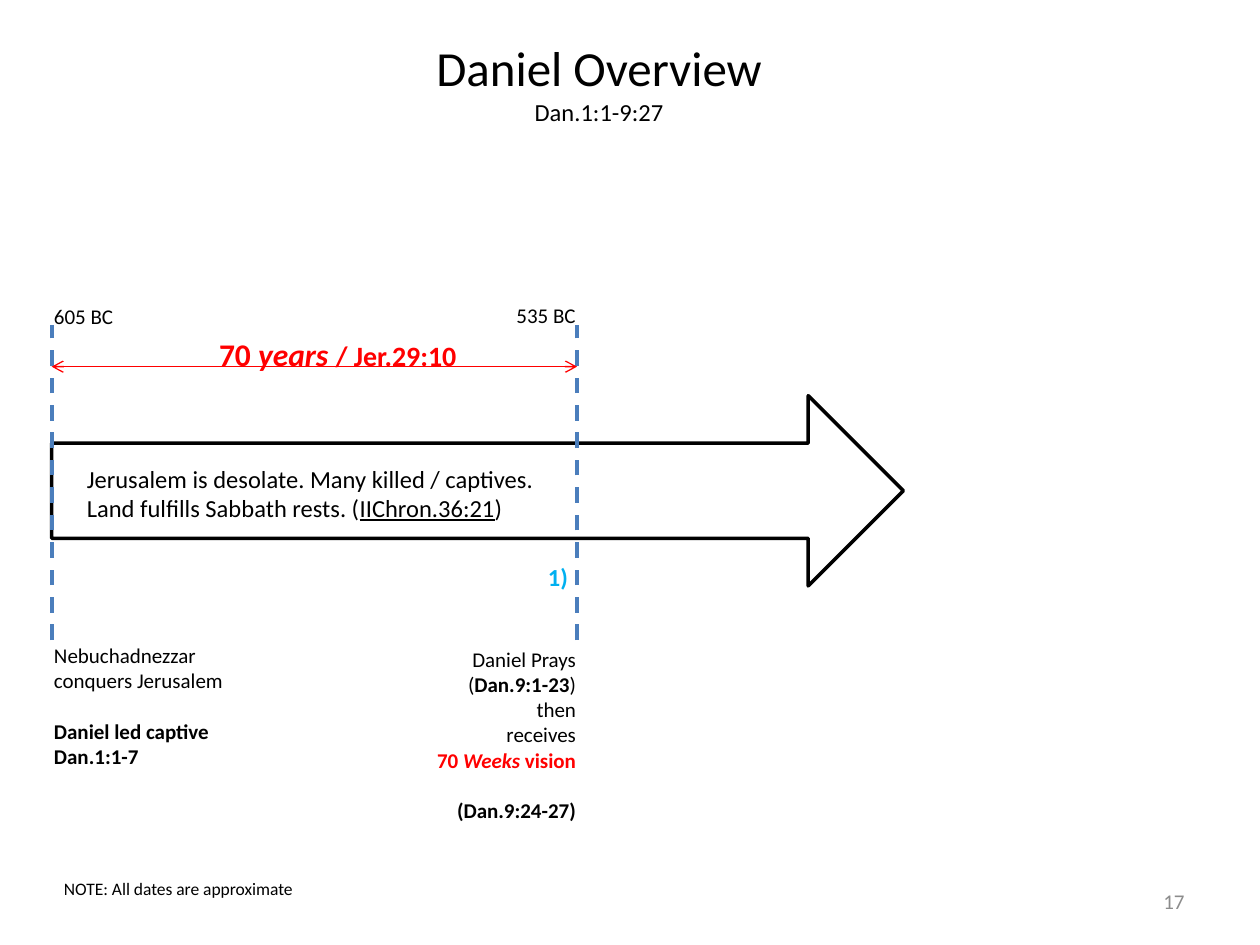
from lxml import etree
from pptx import Presentation
from pptx.dml.color import RGBColor
from pptx.enum.dml import MSO_LINE
from pptx.enum.shapes import MSO_CONNECTOR, MSO_SHAPE
from pptx.enum.text import MSO_ANCHOR, PP_ALIGN
from pptx.oxml.ns import qn
from pptx.util import Inches, Pt

BLACK, RED, BLUE, CYAN, GRAY = "000000", "FF0000", "4B7EBC", "00B0F0", "8C8C8C"
BOLD = {"bold": True}
RED_BOLD = {"bold": True, "color": RED}
RED_ITALIC = {**RED_BOLD, "italic": True}
LEFT, CENTER, RIGHT = PP_ALIGN.LEFT, PP_ALIGN.CENTER, PP_ALIGN.RIGHT


def rgb(value):
    return RGBColor.from_string(value)


class SlideBuilder:
    """Holds the text style and the current slide."""

    font_name = "Calibri"

    def __init__(self, slide):
        self.slide = slide

    def text(self, box, paragraphs, size=12, align=LEFT, anchor=MSO_ANCHOR.TOP,
             gap_before=None, **style):
        """Each paragraph is a string or a list of (text, style) runs.

        gap_before is the index of a paragraph set one line lower.
        """
        shape = self.slide.shapes.add_textbox(*map(Inches, box))
        frame = shape.text_frame
        frame.word_wrap = True
        frame.vertical_anchor = anchor
        for index, content in enumerate(paragraphs):
            paragraph = frame.add_paragraph() if index else frame.paragraphs[0]
            paragraph.alignment = align
            if index == gap_before:
                paragraph.space_before = Pt(size * 1.22)
            runs = [(content, {})] if isinstance(content, str) else content
            for words, changes in runs:
                run = paragraph.add_run()
                run.text = words
                self.format_run(run, **{"size": size, **style, **changes})

    def format_run(self, run, size, color=BLACK, bold=False, italic=False,
                   underline=False):
        font = run.font
        font.name = self.font_name
        font.size = Pt(size)
        font.color.rgb = rgb(color)
        font.bold, font.italic, font.underline = bold, italic, underline

    def right_arrow(self, box, color, width):
        shape = self.slide.shapes.add_shape(MSO_SHAPE.RIGHT_ARROW, *map(Inches, box))
        shape.shadow.inherit = False
        shape.fill.background()
        shape.line.color.rgb = rgb(color)
        shape.line.width = Pt(width)

    def line(self, start, end, color, width, dashed=False, arrows=False):
        connector = self.slide.shapes.add_connector(
            MSO_CONNECTOR.STRAIGHT, *map(Inches, start + end))
        connector.line.color.rgb = rgb(color)
        connector.line.width = Pt(width)
        if dashed:
            connector.line.dash_style = MSO_LINE.DASH
        if arrows:
            for tag in ("a:headEnd", "a:tailEnd"):
                etree.SubElement(connector.line._get_or_add_ln(), qn(tag), type="arrow")
        etree.SubElement(connector._element.spPr, qn("a:effectLst"))


def main():
    presentation = Presentation()
    presentation.slide_width, presentation.slide_height = Inches(10), Inches(7.5)
    builder = SlideBuilder(presentation.slides.add_slide(presentation.slide_layouts[6]))

    # Title
    builder.text((3.17, 0.25, 3.17, 0.81),
                 [[("Daniel Overview", {"size": 28})], "Dan.1:1-9:27"],
                 size=14, align=CENTER)

    # Timeline arrow with the dashed start and end dates
    start, end = 0.41, 4.58
    builder.right_arrow((start, 3.14, 6.76, 1.51), BLACK, 2)
    for x in (start, end):
        builder.line((x, 5.08), (x, 2.58), BLUE, 2.25, dashed=True)
    builder.text((0.33, 2.36, 0.92, 0.3), ["605 BC"])
    builder.text((4, 2.35, 0.68, 0.3), ["535 BC"])
    builder.text((0.59, 3.63, 3.82, 0.57), [
        "Jerusalem is desolate. Many killed / captives.",
        [("Land fulfills Sabbath rests. (", {}),
         ("IIChron.36:21", {"underline": True}), (")", {})],
    ], size=14)

    # Seventy-year span
    builder.text((1.64, 2.61, 2.14, 0.4), [
        [("70 ", RED_BOLD), ("years ", RED_ITALIC),
         ("/ Jer.29:10", {**RED_BOLD, "size": 16})],
    ], size=18)
    builder.line((start, 2.91), (end, 2.91), RED, 0.75, arrows=True)

    # Events below the dates
    builder.text((0.33, 5.05, 1.58, 1.11), [
        "Nebuchadnezzar conquers Jerusalem",
        [("Daniel led captive", BOLD)],
        [("Dan.1:1-7", BOLD)],
    ], gap_before=1)
    builder.text((3.25, 5.08, 1.42, 1.51), [
        "Daniel Prays",
        [("(", {}), ("Dan.9:1-23", BOLD), (")", {})],
        "then",
        "receives",
        [("70 ", RED_BOLD), ("Weeks ", RED_ITALIC), ("vision", RED_BOLD)],
        [("(Dan.9:24-27)", BOLD)],
    ], align=RIGHT, gap_before=5)
    builder.text((4.25, 4.41, 0.42, 0.34), ["1)"], size=14, color=CYAN, bold=True)

    # Note and slide number
    builder.text((0.41, 6.92, 2.1, 0.27), ["NOTE: All dates are approximate"], size=10)
    builder.text((7.17, 6.95, 2.33, 0.4), ["17"], align=RIGHT,
                 anchor=MSO_ANCHOR.MIDDLE, color=GRAY)

    presentation.save("out.pptx")


if __name__ == "__main__":
    main()
